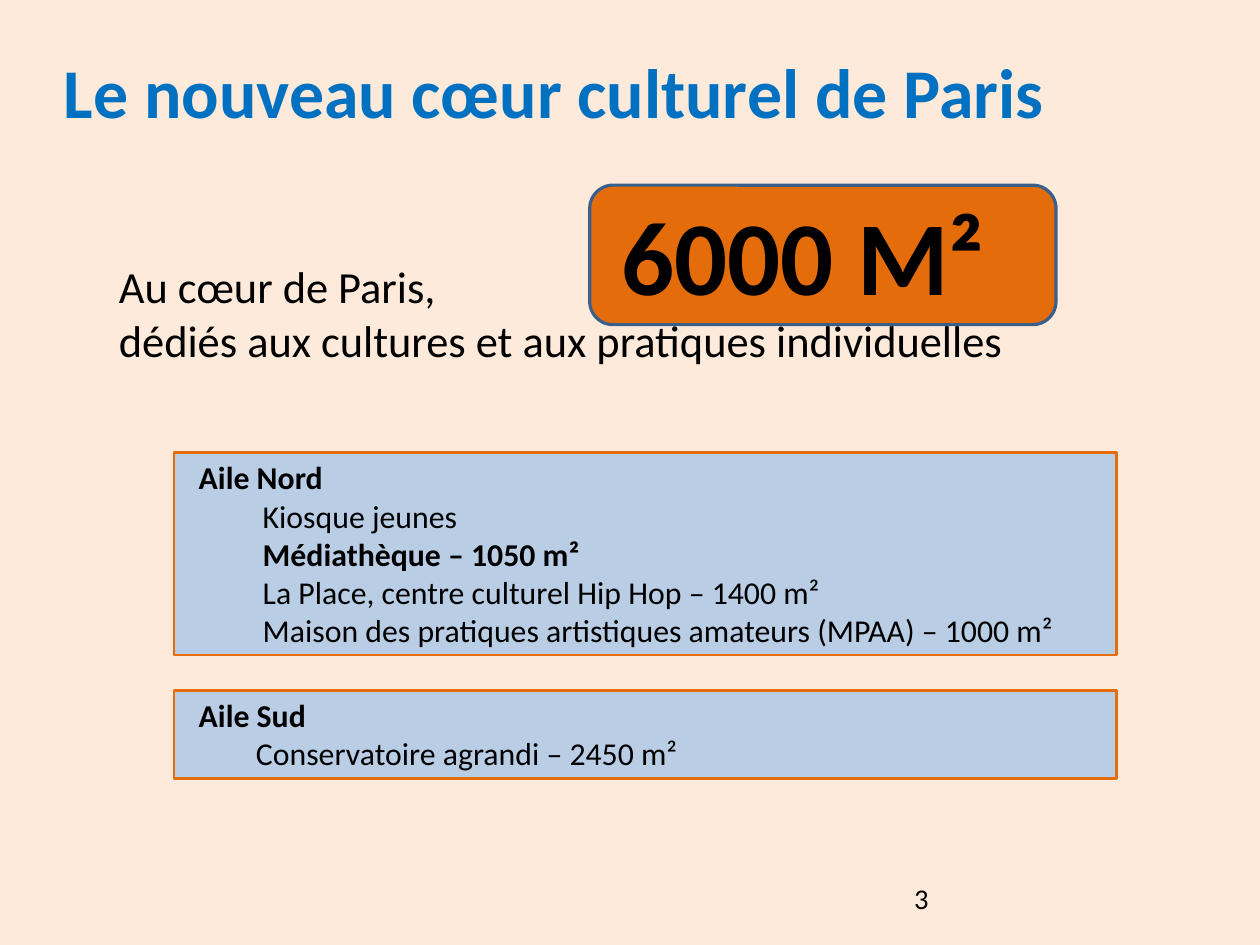
from pptx import Presentation
from pptx.dml.color import RGBColor
from pptx.enum.shapes import MSO_SHAPE
from pptx.enum.text import MSO_ANCHOR, MSO_AUTO_SIZE, PP_ALIGN
from pptx.oxml.ns import qn
from pptx.util import Inches, Pt

RECTANGLE, ROUNDED = MSO_SHAPE.RECTANGLE, MSO_SHAPE.ROUNDED_RECTANGLE
TOP, MIDDLE = MSO_ANCHOR.TOP, MSO_ANCHOR.MIDDLE
LEFT, NO_AUTOFIT = PP_ALIGN.LEFT, MSO_AUTO_SIZE.NONE

COLORS = {
    "background": "FDEADA",
    "title": "0070C0",
    "text": "000000",
    "orange": "E46C0A",
    "badge_line": "3A5F8B",
    "wing": "B9CDE5",
}
FONT = "Calibri"


def color(name):
    return RGBColor.from_string(COLORS[name])


def write(para, text, size=20, bold=False, ink="text", indent=0, line_spacing=1.0):
    """Format one paragraph without a bullet and fill it with text."""
    properties = para._p.get_or_add_pPr()
    properties.set("marL", str(Inches(indent)))
    properties.set("indent", "0")
    properties.append(properties.makeelement(qn("a:buNone"), {}))
    para.alignment = LEFT
    para.line_spacing = line_spacing
    para.space_before = para.space_after = Pt(0)
    span = para.add_run()
    span.text = text
    span.font.name = FONT
    span.font.size = Pt(size)
    span.font.bold = bold
    span.font.color.rgb = color(ink)


class SlideBuilder:
    def __init__(self, deck):
        self.page = deck.slides.add_slide(deck.slide_layouts[1])
        fill = self.page.background.fill
        fill.solid()
        fill.fore_color.rgb = color("background")

    def fill_text(self, box, lines, anchor=TOP, margins=(0.1, 0.05)):
        """Each line is a pair of text and format arguments."""
        frame = box.text_frame
        frame.word_wrap = True
        frame.auto_size = NO_AUTOFIT
        frame.vertical_anchor = anchor
        frame.margin_left = frame.margin_right = Inches(margins[0])
        frame.margin_top = frame.margin_bottom = Inches(margins[1])
        for index, (text, style) in enumerate(lines):
            para = frame.add_paragraph() if index else frame.paragraphs[0]
            write(para, text, **style)

    def placeholder(self, index, area, lines, **layout):
        box = self.page.placeholders[index]
        box.left, box.top, box.width, box.height = map(Inches, area)
        self.fill_text(box, lines, **layout)

    def text(self, area, lines):
        self.fill_text(self.page.shapes.add_textbox(*map(Inches, area)), lines)

    def panel(self, kind, area, fill, line, width):
        box = self.page.shapes.add_shape(kind, *map(Inches, area))
        box.shadow.inherit = False
        box.fill.solid()
        box.fill.fore_color.rgb = color(fill)
        box.line.color.rgb = color(line)
        box.line.width = Pt(width)
        return box

    def wing(self, top, height, name, items, indent):
        box = self.panel(RECTANGLE, (1.52, top, 8.25, height), "wing", "orange", 1.5)
        lines = [(name, {"bold": True, "indent": 0.12})]
        lines += [(item, {"bold": bold, "indent": indent}) for item, bold in items]
        self.fill_text(box, lines)


def main():
    deck = Presentation()
    # The page measures 11.02 by 8.27 inches, set exactly in points
    deck.slide_width, deck.slide_height = Pt(793.75), Pt(595.25)
    slide = SlideBuilder(deck)

    # Title and introduction
    slide.placeholder(
        0, (0.56, 0.31, 9.92, 1.06),
        [("Le nouveau cœur culturel de Paris",
          {"size": 44, "bold": True, "ink": "title", "line_spacing": 0.9})],
        anchor=MIDDLE, margins=(0, 0))
    introduction = ["Au cœur de Paris,",
                    "dédiés aux cultures et aux pratiques individuelles"]
    slide.placeholder(1, (0.82, 2.22, 9.03, 1.3),
                      [(line, {"size": 28, "indent": 0.12}) for line in introduction])

    # Total area badge
    slide.panel(ROUNDED, (5.16, 1.62, 4.08, 1.22), "orange", "badge_line", 2)
    slide.text((5.34, 1.62, 4.34, 1.21), [("6000 M²", {"size": 66, "bold": True})])

    # The two wings
    slide.wing(3.96, 1.77, "Aile Nord", [
        ("Kiosque jeunes", False),
        ("Médiathèque – 1050 m²", True),
        ("La Place, centre culturel Hip Hop – 1400 m²", False),
        ("Maison des pratiques artistiques amateurs (MPAA) – 1000 m²", False),
    ], indent=0.68)
    slide.wing(6.04, 0.77, "Aile Sud",
               [("Conservatoire agrandi – 2450 m²", False)], indent=0.62)

    # Page number
    slide.text((7.9, 7.66, 2.57, 0.44), [("3", {"size": 18})])

    deck.save("out.pptx")


if __name__ == "__main__":
    main()
